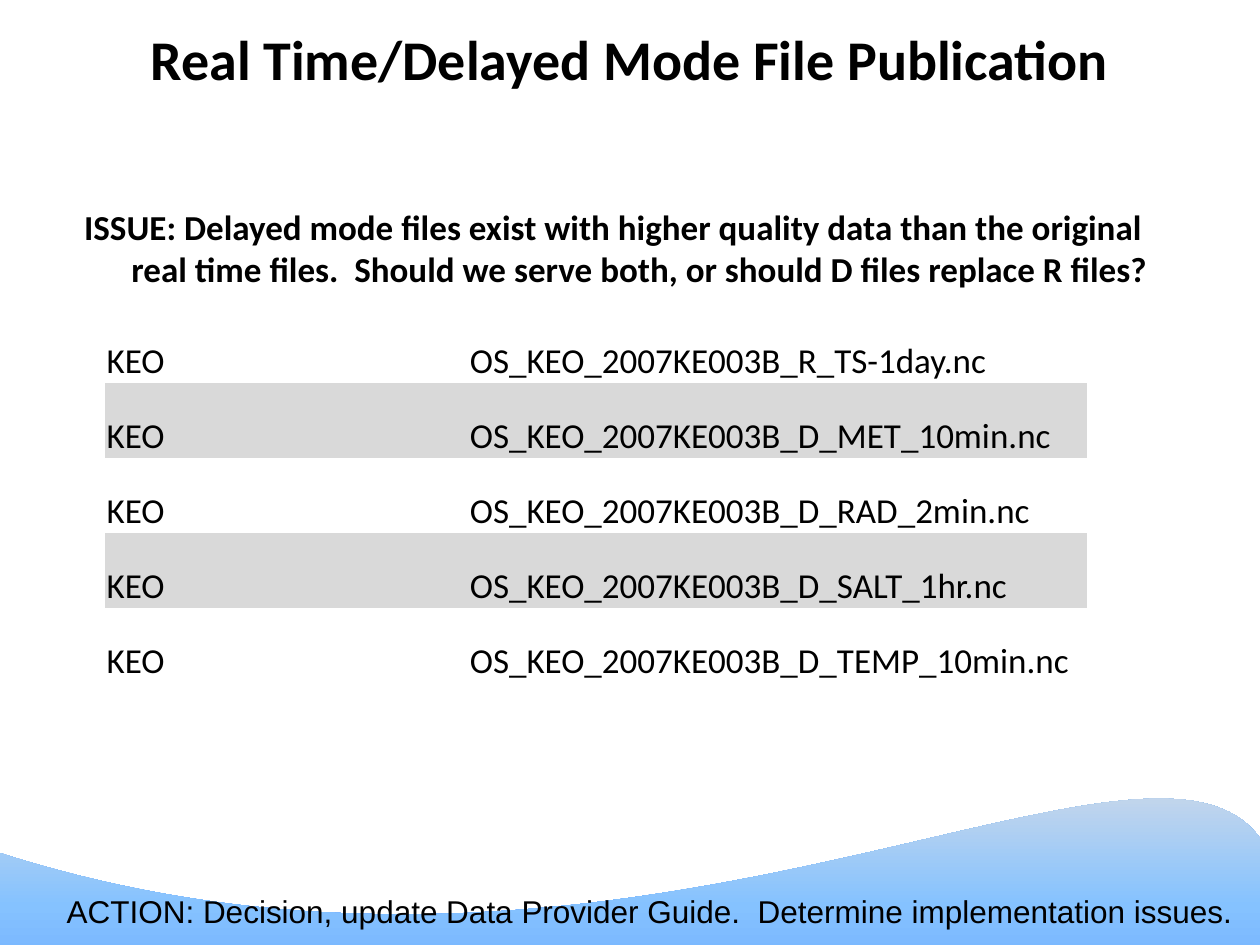
from copy import deepcopy

from pptx import Presentation
from pptx.dml.color import RGBColor
from pptx.enum.text import MSO_ANCHOR, PP_ALIGN
from pptx.oxml.ns import qn
from pptx.oxml.xmlchemy import OxmlElement
from pptx.util import Pt

CENTER = PP_ALIGN.CENTER
MIDDLE = MSO_ANCHOR.MIDDLE
BOTTOM = MSO_ANCHOR.BOTTOM

BLACK = RGBColor(0x00, 0x00, 0x00)
BAND_GRAY = RGBColor(0xD9, 0xD9, 0xD9)
WAVE_STOPS = [
    (0, RGBColor(0x5E, 0x9E, 0xFF)),
    (0.4, RGBColor(0x85, 0xC2, 0xFF)),
    (0.7, RGBColor(0xC4, 0xD6, 0xEB)),
    (1, RGBColor(0xFF, 0xEB, 0xFA)),
]
PLAIN_TABLE_STYLE = "{2D5ABB26-0587-4C30-8999-92F81FD0307C}"

FILES = [
    "OS_KEO_2007KE003B_R_TS-1day.nc",
    "OS_KEO_2007KE003B_D_MET_10min.nc",
    "OS_KEO_2007KE003B_D_RAD_2min.nc",
    "OS_KEO_2007KE003B_D_SALT_1hr.nc",
    "OS_KEO_2007KE003B_D_TEMP_10min.nc",
]


def write(paragraph, text, size, name="Calibri", bold=False):
    paragraph.text = text
    font = paragraph.font
    font.name = name
    font.size = Pt(size)
    font.bold = bold
    font.color.rgb = BLACK


def add_wave(slide, left, top, width, height):
    def point(x, y):
        return Pt(left + x * width), Pt(top + y * height)

    bottom = 0.71
    builder = slide.shapes.build_freeform(*point(1, bottom), scale=1.0)
    builder.add_line_segments([
        point(0, bottom), point(0, 0.46),
        point(0.5, 1), point(0.91, 0), point(1, 0.42),
    ])
    wave = builder.convert_to_shape()
    wave.shadow.inherit = False
    wave.line.fill.background()

    segments = wave._element.findall(".//" + qn("a:lnTo"))[2:5]
    curve = OxmlElement("a:cubicBezTo")
    segments[0].addprevious(curve)
    for segment in segments:
        curve.append(segment[0])
        segment.getparent().remove(segment)

    fill = wave.fill
    fill.gradient()
    fill.gradient_angle = 90
    stop_list = wave._element.find(".//" + qn("a:gsLst"))
    while len(stop_list) < len(WAVE_STOPS):
        stop_list.append(deepcopy(stop_list[0]))
    for stop, (position, color) in zip(fill.gradient_stops, WAVE_STOPS):
        stop.position = position
        stop.color.rgb = color


def place_title(slide, left, top, width, height):
    title = slide.shapes.title
    title.left, title.top = Pt(left), Pt(top)
    title.width, title.height = Pt(width), Pt(height)
    title.text_frame.vertical_anchor = MIDDLE
    paragraph = title.text_frame.paragraphs[0]
    write(paragraph, "Real Time/Delayed Mode File Publication", 32, bold=True)
    paragraph.alignment = CENTER


def add_issue(slide, left, top, width, height):
    box = slide.shapes.add_textbox(Pt(left), Pt(top), Pt(width), Pt(height))
    box.text_frame.word_wrap = True
    paragraph = box.text_frame.paragraphs[0]
    properties = paragraph._p.get_or_add_pPr()
    properties.set("marL", str(Pt(27)))
    properties.set("indent", str(Pt(-27)))
    write(
        paragraph,
        "ISSUE: Delayed mode files exist with higher quality data than the original "
        "real time files.  Should we serve both, or should D files replace R files?",
        20,
        bold=True,
    )


def add_file_table(slide, left, top, width, height):
    frame = slide.shapes.add_table(
        len(FILES), 2, Pt(left), Pt(top), Pt(width), Pt(height)
    )
    table = frame.table
    table.first_row = False
    table.horz_banding = False
    table._tbl.tblPr.find(qn("a:tableStyleId")).text = PLAIN_TABLE_STYLE
    site_width = 207.5
    table.columns[0].width = Pt(site_width)
    table.columns[1].width = Pt(width - site_width)
    for row, file_name in enumerate(FILES):
        for column, text in enumerate(("KEO", file_name)):
            cell = table.cell(row, column)
            cell.margin_left = cell.margin_right = cell.margin_top = Pt(0.75)
            cell.margin_bottom = 0
            cell.vertical_anchor = BOTTOM
            write(cell.text_frame.paragraphs[0], text, 20)
            if row % 2:
                cell.fill.solid()
                cell.fill.fore_color.rgb = BAND_GRAY
            else:
                cell.fill.background()


def add_action(slide, left, top, width, height):
    box = slide.shapes.add_textbox(Pt(left), Pt(top), Pt(width), Pt(height))
    box.text_frame.word_wrap = False
    write(
        box.text_frame.paragraphs[0],
        "ACTION: Decision, update Data Provider Guide.  Determine implementation issues.",
        18,
        name="Arial",
    )


def main():
    presentation = Presentation()
    presentation.slide_width, presentation.slide_height = Pt(720), Pt(540)
    slide = presentation.slides.add_slide(presentation.slide_layouts[5])
    add_wave(slide, 0, 389.5, 720, 213)
    place_title(slide, 0, 4.5, 720, 57.5)
    add_issue(slide, 41, 114, 638.5, 384)
    add_action(slide, 31, 506, 682, 29)
    add_file_table(slide, 60.25, 176.25, 561, 214)
    presentation.save("out.pptx")


if __name__ == "__main__":
    main()
